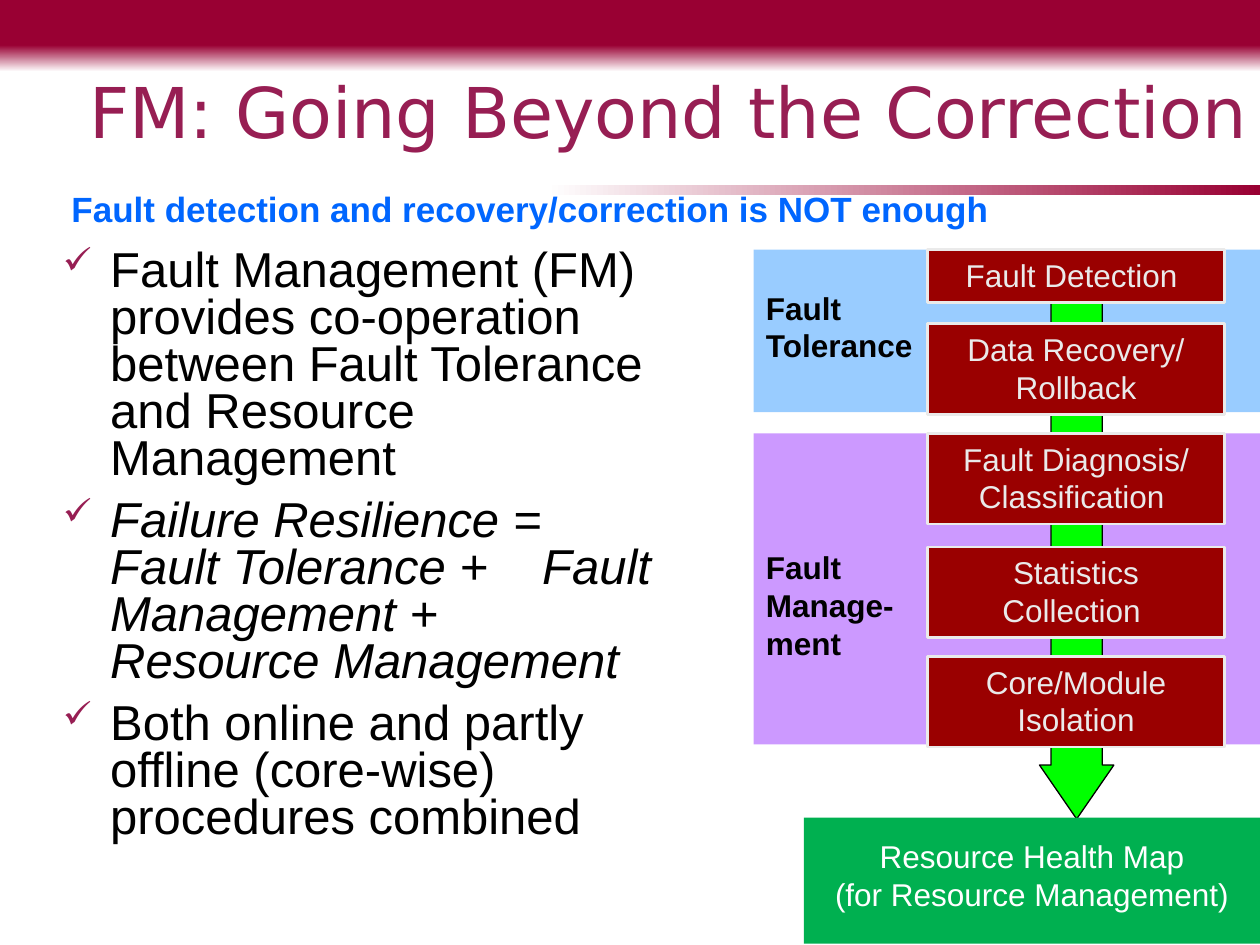
"""Build the fault management slide."""
from lxml import etree
from pptx import Presentation
from pptx.dml.color import RGBColor
from pptx.enum.shapes import MSO_SHAPE
from pptx.enum.text import MSO_ANCHOR, PP_ALIGN
from pptx.oxml.ns import qn
from pptx.util import Pt

RECT, DOWN_ARROW = MSO_SHAPE.RECTANGLE, MSO_SHAPE.DOWN_ARROW
LEFT, CENTER, RIGHT = PP_ALIGN.LEFT, PP_ALIGN.CENTER, PP_ALIGN.RIGHT
TOP, BOTTOM = MSO_ANCHOR.TOP, MSO_ANCHOR.BOTTOM

MAROON = RGBColor(0x99, 0x00, 0x33)
PLUM = RGBColor(0x97, 0x1E, 0x53)
BLUE = RGBColor(0x00, 0x66, 0xFF)
SKY = RGBColor(0x99, 0xCC, 0xFF)
VIOLET = RGBColor(0xCC, 0x99, 0xFF)
LIME = RGBColor(0x00, 0xFF, 0x00)
GREEN = RGBColor(0x00, 0xB0, 0x50)
RED = RGBColor(0x9A, 0x00, 0x00)
PALE = RGBColor(0xEA, 0xEA, 0xEA)
BLACK = RGBColor(0x00, 0x00, 0x00)
WHITE = RGBColor(0xFF, 0xFF, 0xFF)


def write(tf, lines, size=18, color=BLACK, font="Arial", bold=False,
          align=LEFT, anchor=TOP, top=3.6):
    tf.word_wrap = True
    tf.vertical_anchor = anchor
    tf.margin_top = Pt(top)
    for i, line in enumerate(lines):
        p = tf.add_paragraph() if i else tf.paragraphs[0]
        p.alignment = align
        r = p.add_run()
        r.text = line
        r.font.size, r.font.name, r.font.bold = Pt(size), font, bold
        r.font.color.rgb = color


def add_box(x, y, w, h, fill=None, line=None, weight=0.75, kind=RECT):
    sp = s.shapes.add_shape(kind, Pt(x), Pt(y), Pt(w), Pt(h))
    sp.shadow.inherit = False
    if fill is not None:
        sp.fill.solid()
        sp.fill.fore_color.rgb = fill
    if line is None:
        sp.line.fill.background()
    else:
        sp.line.color.rgb = line
        sp.line.width = Pt(weight)
    return sp


prs = Presentation()
prs.slide_width, prs.slide_height = Pt(720), Pt(540)
s = prs.slides.add_slide(prs.slide_layouts[6])

bands = [
    ((0, 0, 720, 41), 270, [(0.63, MAROON), (1, WHITE)]),
    ((312.5, 105.8, 407.5, 5.8), 0, [(0, WHITE), (1, MAROON)]),
]
for place, angle, stops in bands:
    sp = add_box(*place)
    sp.fill.gradient()
    sp.fill.gradient_angle = angle
    for stop, (position, color) in zip(sp.fill.gradient_stops, stops):
        stop.position = position
        stop.color.rgb = color

title = s.shapes.add_textbox(Pt(0), Pt(0.7), Pt(720), Pt(90))
write(title.text_frame, ["FM: Going Beyond the Correction"], size=40,
      color=PLUM, font="DejaVu Sans", align=RIGHT, anchor=BOTTOM)

body = s.shapes.add_textbox(Pt(36), Pt(142.6), Pt(338.4), Pt(368.6))
tf = body.text_frame
tf.margin_left = tf.margin_right = tf.margin_bottom = 0
write(tf, [
    "Fault Management (FM) provides co-operation between Fault Tolerance "
    "and Resource Management",
    "Failure Resilience = Fault Tolerance +",
    "Both online and partly offline (core-wise) procedures combined",
], size=28, top=0)

formula = tf.paragraphs[1]
for text, spacing in [(" ", 2330), ("Fault Management + Resource Management", 0)]:
    r = formula.add_run()
    r.text = text
    r.font.size, r.font.name = Pt(28), "Arial"
    r.font.color.rgb = BLACK
    r.font._element.set("spc", str(spacing))
for r in formula.runs:
    r.font.italic = True

for i, p in enumerate(tf.paragraphs):
    pPr = p._p.get_or_add_pPr()
    pPr.set("marL", str(Pt(27)))
    pPr.set("indent", str(-Pt(27)))
    bullet_color = etree.SubElement(pPr, qn("a:buClr"))
    etree.SubElement(bullet_color, qn("a:srgbClr"), val=str(PLUM))
    etree.SubElement(pPr, qn("a:buSzPct"), val="75000")
    etree.SubElement(pPr, qn("a:buChar"), char="✓")
    p.line_spacing = 0.8
    p.space_before = Pt(5.6 if i else 0)
    p.space_after = Pt(2.8)

subtitle = s.shapes.add_textbox(Pt(33.8), Pt(103.7), Pt(566.6), Pt(31.7))
write(subtitle.text_frame,
      ["Fault detection and recovery/correction is NOT enough"],
      size=20, color=BLUE, bold=True)

stages = [
    (247.7, 177.8, VIOLET, 65.5, ["Fault", "Manage-", "ment"]),
    (142.6, 92.9, SKY, 22.3, ["Fault", "Tolerance"]),
]
for y, h, fill, top, lines in stages:
    sp = add_box(430.6, y, 289.4, h, fill)
    write(sp.text_frame, lines, bold=True, top=top)

arrow = add_box(594, 156.2, 42.5, 311.8, LIME, BLACK, kind=DOWN_ARROW)
arrow.adjustments[0] = 0.688
arrow.adjustments[1] = 0.724

steps = [
    (142.6, 30.2, "Fault Detection "),
    (185, 51.8, "Data Recovery/ Rollback"),
    (247.7, 51.8, "Fault Diagnosis/ Classification "),
    (312.5, 51.8, "Statistics Collection "),
    (375.1, 51.8, "Core/Module Isolation"),
]
for y, h, text in steps:
    sp = add_box(530, y, 169.8, h, RED, PALE, 1.5)
    write(sp.text_frame, [text], color=PALE, align=CENTER)

health_map = add_box(459.4, 467.3, 260.6, 72, GREEN)
write(health_map.text_frame,
      ["Resource Health Map", "(for Resource Management)"],
      color=WHITE, align=CENTER, top=11)

prs.save("out.pptx")
